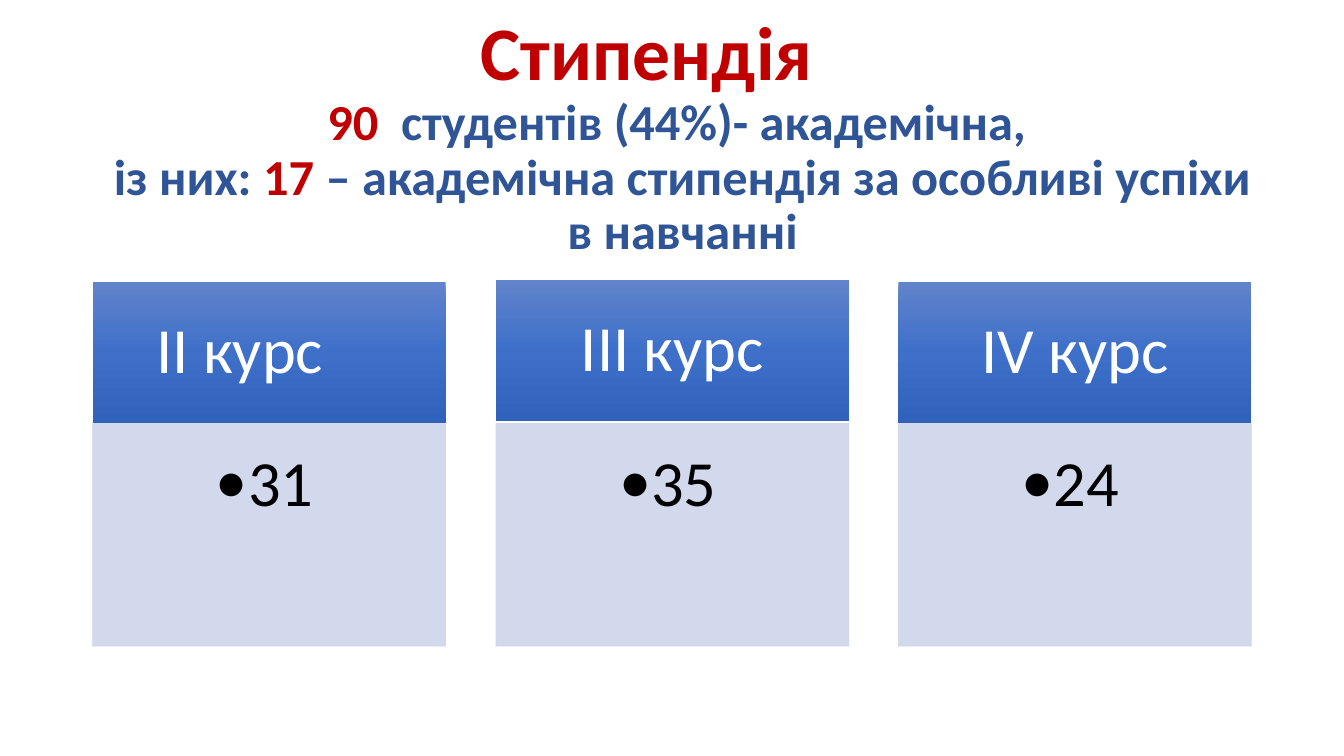
from copy import deepcopy

from pptx import Presentation
from pptx.dml.color import RGBColor
from pptx.enum.shapes import MSO_SHAPE
from pptx.enum.text import MSO_ANCHOR, PP_ALIGN
from pptx.oxml.ns import qn
from pptx.util import Pt
from lxml import etree

PX = 9144
RECT = MSO_SHAPE.RECTANGLE
TOP, MIDDLE = MSO_ANCHOR.TOP, MSO_ANCHOR.MIDDLE
CENTER = PP_ALIGN.CENTER

COLORS = {
    "red": "C00000",
    "blue": "2F5597",
    "white": "FFFFFF",
    "black": "000000",
    "pale": "CFD5EA",
    "grad_top": "6183CB",
    "grad_mid": "3E70CA",
    "grad_end": "3062BB",
}


def rgb(name):
    return RGBColor.from_string(COLORS[name])


def add_run(p, text, size=36, color="blue", bold=False, font="Calibri"):
    r = p.add_run()
    r.text = text
    r.font.name = font
    r.font.size = Pt(size)
    r.font.bold = bold
    r.font.color.rgb = rgb(color)


class SlideBuilder:
    def __init__(self, prs):
        self.slide = prs.slides.add_slide(prs.slide_layouts[6])

    def frame(self, sp, anchor, insets):
        tf = sp.text_frame
        tf.word_wrap = True
        tf.vertical_anchor = anchor
        tf.margin_left, tf.margin_top, tf.margin_right, tf.margin_bottom = [
            v * PX for v in insets]
        return tf

    def paragraph(self, p, tab=None):
        p.alignment = CENTER
        p.line_spacing = 0.9
        if tab:
            tabs = etree.SubElement(p._p.get_or_add_pPr(), qn("a:tabLst"))
            stop = etree.SubElement(tabs, qn("a:tab"))
            stop.set("pos", str(tab * PX))
            stop.set("algn", "l")
        return p

    def title(self, box, lines, tab):
        sp = self.slide.shapes.add_textbox(*[v * PX for v in box])
        tf = self.frame(sp, MIDDLE, (10, 5, 10, 18))
        for i, runs in enumerate(lines):
            p = tf.add_paragraph() if i else tf.paragraphs[0]
            self.paragraph(p, tab=tab)
            for text, color, size in runs:
                add_run(p, text, size=size, color=color, bold=True)

    def rect(self, box):
        sp = self.slide.shapes.add_shape(RECT, *[v * PX for v in box])
        sp.shadow.inherit = False
        return sp

    def header(self, box, text, tab):
        sp = self.rect(box)
        sp.line.fill.background()
        sp.fill.gradient()
        sp.fill.gradient_angle = 270
        stops = sp._element.spPr.find(qn("a:gradFill")).find(qn("a:gsLst"))
        stops.append(deepcopy(stops[0]))
        names = ("grad_top", "grad_mid", "grad_end")
        for i, (stop, name) in enumerate(zip(sp.fill.gradient_stops, names)):
            stop.position = i / 2
            stop.color.rgb = rgb(name)
        tf = self.frame(sp, MIDDLE, (36, 20, 36, 20))
        p = self.paragraph(tf.paragraphs[0], tab=tab)
        add_run(p, text, size=46, color="white")

    def body(self, box, text):
        sp = self.rect(box)
        sp.fill.solid()
        sp.fill.fore_color.rgb = rgb("pale")
        sp.line.color.rgb = rgb("pale")
        sp.line.width = Pt(0.5)
        for clr in sp._element.spPr.iter(qn("a:srgbClr")):
            etree.SubElement(clr, qn("a:alpha")).set("val", "90000")
        tf = self.frame(sp, TOP, (27, 27, 36, 40))
        p = self.paragraph(tf.paragraphs[0])
        pPr = p._p.get_or_add_pPr()
        pPr.set("marL", str(31 * PX))
        pPr.set("indent", str(-31 * PX))
        etree.SubElement(pPr, qn("a:buFont")).set("typeface", "Calibri")
        etree.SubElement(pPr, qn("a:buChar")).set("char", "•")
        add_run(p, text, size=46, color="black")


def main():
    prs = Presentation()
    prs.slide_width = 1333 * PX
    prs.slide_height = 750 * PX
    s = SlideBuilder(prs)

    s.title((102, 27, 1150, 233), [
        [("Стипендія\t", "red", 54)],
        [("90", "red", 36), ("  студентів (44%)- академічна, ", "blue", 36)],
        [("із них: ", "blue", 36), ("17 ", "red", 36),
         ("– академічна стипендія за особливі успіхи в навчанні", "blue", 36)],
    ], tab=400)

    courses = [("ІІ курс\t", "31", 280), ("ІІІ курс", "35", 278),
               ("ІV курс", "24", 280)]
    for i, (course, count, top) in enumerate(courses):
        left = 92 + round(i * 399.5)
        s.header((left, top, 350, 140), course, tab=224)
        s.body((left, 420, 350, 221), count)

    prs.save("out.pptx")


if __name__ == "__main__":
    main()
